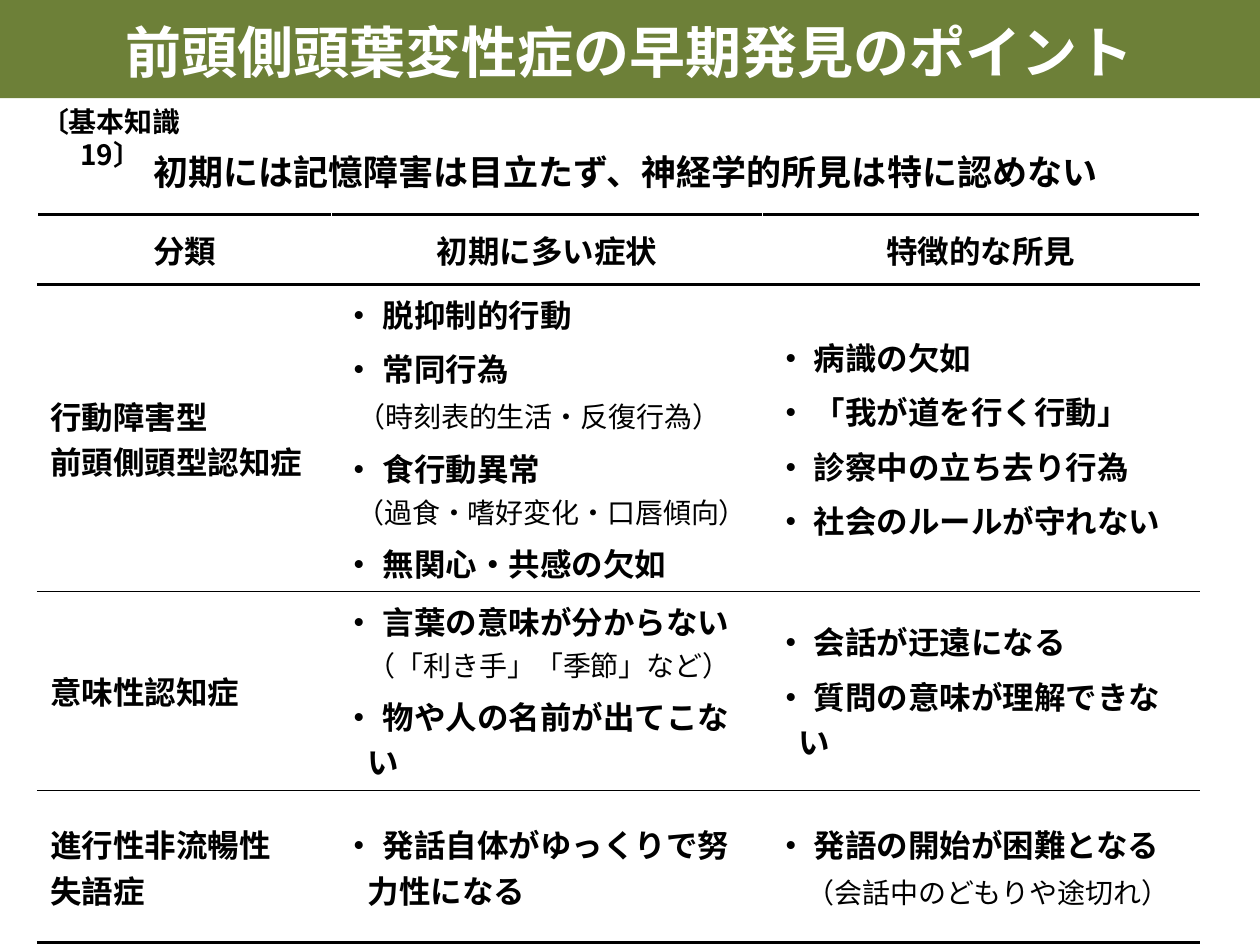
from lxml.etree import SubElement
from pptx import Presentation
from pptx.dml.color import RGBColor
from pptx.enum.shapes import MSO_SHAPE as Shape
from pptx.enum.text import MSO_ANCHOR as Anchor, MSO_AUTO_SIZE as AutoSize, PP_ALIGN as Align
from pptx.oxml.ns import qn
from pptx.util import Cm, Pt

FONT = "Noto Sans CJK JP"
OLIVE = RGBColor(0x6D, 0x80, 0x38)
BLACK = RGBColor(0, 0, 0)
WHITE = RGBColor(0xFF, 0xFF, 0xFF)

THICK, THIN, SIDE = 2.25, 0.75, 1
HANG = 0.48
HEADERS = ["分類", "初期に多い症状", "特徴的な所見"]
COLUMN_WIDTHS = [5.92, 8.69, 8.81]
ROW_HEIGHTS = [1.42, 5.94, 3.43, 3.07]


def add_text(paragraph, text, size=18, bold=True, color=BLACK):
    run = paragraph.add_run()
    run.text = text
    font = run.font
    font.name, font.size, font.bold = FONT, Pt(size), bold
    font.color.rgb = color
    SubElement(run._r.get_or_add_rPr(), qn("a:ea"), typeface=FONT)


# Each paragraph is a list of (text, format) runs and its paragraph settings
def plain(text):
    return [(text, {})], {}


def header(text):
    return [(text, {})], {"align": Align.CENTER}


def point(text, note=None):
    runs = [("・ " + text, {})]
    if note:
        runs.append(remark(note))
    return runs, {"left": HANG, "first": -HANG, "before": 5}


def remark(text):
    return text, {"size": 16, "bold": False}


def detail(text, lead=None, left=0):
    runs = [(lead, {"bold": False})] if lead else []
    return runs + [remark(text)], {"left": left}


ROWS = [
    [header(text) for text in HEADERS],
    [
        [plain("行動障害型"), plain("前頭側頭型認知症")],
        [
            point("脱抑制的行動"),
            point("常同行為"),
            detail("（時刻表的生活・反復行為）", lead=" ", left=0.13),
            point("食行動異常"),
            detail("（過食・嗜好変化・口唇傾向）", left=0.25),
            point("無関心・共感の欠如"),
        ],
        [
            point("病識の欠如"),
            point("「我が道を行く行動」"),
            point("診察中の立ち去り行為"),
            point("社会のルールが守れない"),
        ],
    ],
    [
        [plain("意味性認知症")],
        [
            point("言葉の意味が分からない", note="（「利き手」「季節」など）"),
            point("物や人の名前が出てこない"),
        ],
        [point("会話が迂遠になる"), point("質問の意味が理解できない")],
    ],
    [
        [plain("進行性非流暢性"), plain("失語症")],
        [point("発話自体がゆっくりで努力性になる")],
        [
            point("発語の開始が困難となる"),
            detail("（会話中のどもりや途切れ）", lead="　"),
        ],
    ],
]
ROWS[0] = [[paragraph] for paragraph in ROWS[0]]


class SlideBuilder:
    def __init__(self, slide):
        self.slide = slide

    def band(self, left, top, width, height, color):
        shape = self.slide.shapes.add_shape(
            Shape.RECTANGLE, Cm(left), Cm(top), Cm(width), Cm(height))
        shape.shadow.inherit = False
        shape.fill.solid()
        shape.fill.fore_color.rgb = color
        shape.line.fill.background()

    def text_box(self, text, left, top, width, height,
                 anchor=Anchor.TOP, line_spacing=None, grow=True, **style):
        box = self.slide.shapes.add_textbox(Cm(left), Cm(top), Cm(width), Cm(height))
        frame = box.text_frame
        frame.word_wrap = True
        frame.vertical_anchor = anchor
        frame.auto_size = AutoSize.SHAPE_TO_FIT_TEXT if grow else AutoSize.NONE
        paragraph = frame.paragraphs[0]
        paragraph.alignment = Align.CENTER
        if line_spacing:
            paragraph.line_spacing = Pt(line_spacing)
        add_text(paragraph, text, **style)

    def table(self, rows, left, top, widths, heights, rules):
        table = self.slide.shapes.add_table(
            len(rows), len(widths), Cm(left), Cm(top),
            Cm(sum(widths)), Cm(sum(heights))).table
        table.first_row = table.horz_banding = False
        for column, width in zip(table.columns, widths):
            column.width = Cm(width)
        for row, height in zip(table.rows, heights):
            row.height = Cm(height)
        for i, row in enumerate(rows):
            for j, paragraphs in enumerate(row):
                cell = table.cell(i, j)
                self.fill_cell(cell, paragraphs)
                self.borders(cell, rules[i], rules[i + 1])

    def fill_cell(self, cell, paragraphs):
        cell.fill.background()
        cell.vertical_anchor = Anchor.MIDDLE
        frame = cell.text_frame
        for number, (runs, settings) in enumerate(paragraphs):
            paragraph = frame.add_paragraph() if number else frame.paragraphs[0]
            paragraph.alignment = settings.get("align", Align.LEFT)
            paragraph.space_before = Pt(settings.get("before", 0))
            properties = paragraph._p.get_or_add_pPr()
            properties.set("marL", str(Cm(settings.get("left", 0))))
            properties.set("indent", str(Cm(settings.get("first", 0))))
            for text, style in runs:
                add_text(paragraph, text, **style)

    def borders(self, cell, above, below):
        properties = cell._tc.get_or_add_tcPr()
        edges = [("L", SIDE, WHITE), ("R", SIDE, WHITE),
                 ("T", above, BLACK), ("B", below, BLACK)]
        for position, (edge, width, color) in enumerate(edges):
            line = SubElement(properties, qn("a:ln" + edge), w=str(Pt(width)))
            fill = SubElement(line, qn("a:solidFill"))
            SubElement(fill, qn("a:srgbClr"), val=str(color))
            properties.insert(position, line)  # borders come before the fill


def main():
    presentation = Presentation()
    presentation.slide_width, presentation.slide_height = Cm(25.4), Cm(19.05)
    slide = presentation.slides.add_slide(presentation.slide_layouts[6])
    builder = SlideBuilder(slide)

    # Table of types, symptoms and findings
    builder.table(ROWS, 0.76, 4.32, COLUMN_WIDTHS, ROW_HEIGHTS,
                  rules=[THICK, THICK, THIN, THIN, THICK])

    # Key message
    builder.text_box("初期には記憶障害は目立たず、神経学的所見は特に認めない",
                     1.22, 2.9, 22.78, 1.12, size=20)

    # Title band
    builder.band(0, 0, 25.4, 1.98, OLIVE)
    builder.text_box("前頭側頭葉変性症の早期発見のポイント", 0.43, 0.08, 24.54, 1.85,
                     anchor=Anchor.MIDDLE, line_spacing=40, grow=False,
                     size=32, color=WHITE)

    # Section label
    builder.text_box("〔基本知識 19〕", 0, 1.98, 4.47, 0.94, size=16)

    presentation.save("out.pptx")


if __name__ == "__main__":
    main()
